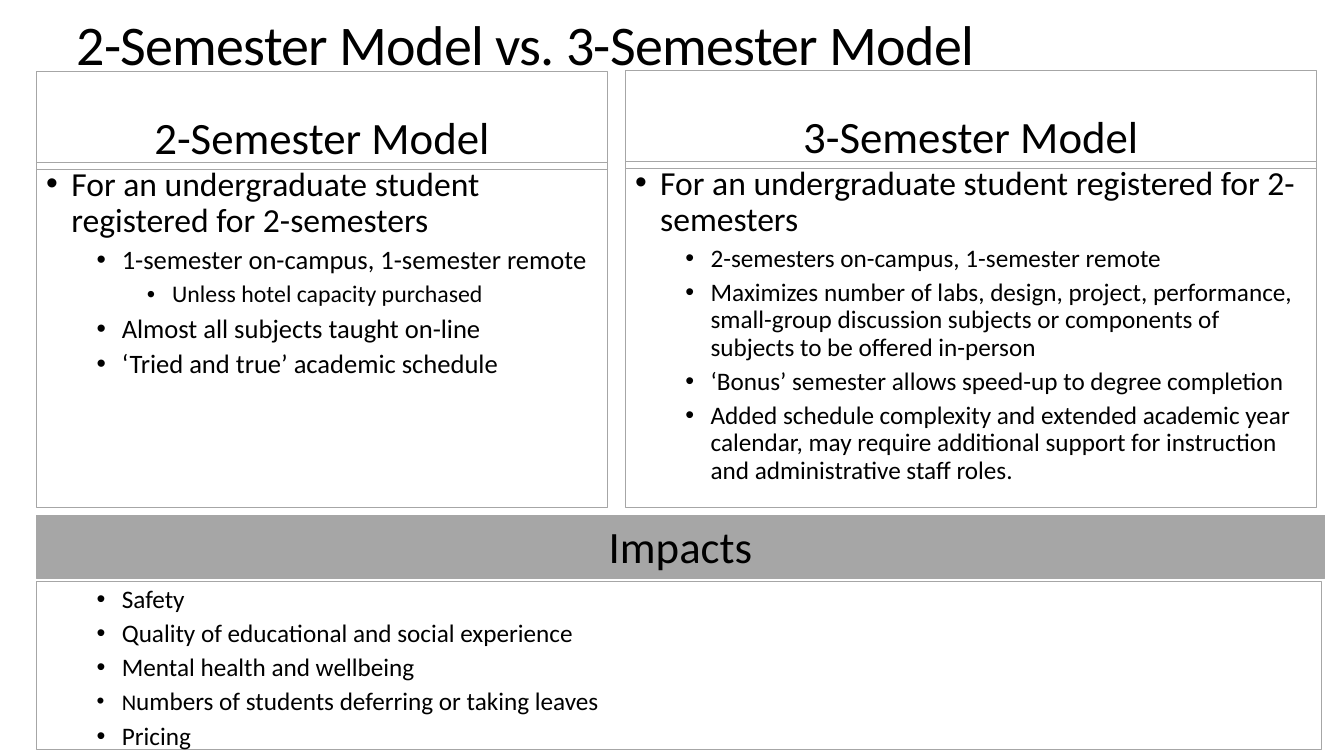
from dataclasses import dataclass

from lxml import etree
from pptx import Presentation, util as u
from pptx.dml.color import RGBColor
from pptx.enum import shapes, text
from pptx.oxml import ns

FONT = "Calibri"
BLACK = "000000"
GREY = "A6A6A6"
LEFT, RIGHT = 0.36, 6.2
LEFT_WIDTH, RIGHT_WIDTH = 5.67, 6.86
HEADING_HEIGHT = 0.97


@dataclass
class Line:
    """A paragraph; level None is a centred heading, others are bullets."""
    wording: str
    size: float
    level: int | None = 1
    initial_size: float | None = None


@dataclass
class Panel:
    """A bordered rectangle with its paragraphs."""
    left: float
    top: float
    width: float
    height: float
    lines: list[Line]
    fill: str | None = None


def heading(wording: str) -> list[Line]:
    """Return the single centred paragraph of a heading panel."""
    return [Line(wording, 32, None)]


PANELS = [
    Panel(RIGHT, 1.6, RIGHT_WIDTH, 3.44, [
        Line("For an undergraduate student registered for 2-semesters", 24, 0),
        Line("2-semesters on-campus, 1-semester remote", 18),
        Line("Maximizes number of labs, design, project, performance, small-group "
             "discussion subjects or components of subjects to be offered in-person", 18),
        Line("‘Bonus’ semester allows speed-up to degree completion", 18),
        Line("Added schedule complexity and extended academic year calendar, may require "
             "additional support for instruction and administrative staff roles.", 18),
    ]),
    Panel(LEFT, 1.61, LEFT_WIDTH, 3.43, [
        Line("For an undergraduate student registered for 2-semesters", 24, 0),
        Line("1-semester on-campus, 1-semester remote", 19),
        Line("Unless hotel capacity purchased", 17, 2),
        Line("Almost all subjects taught on-line", 19),
        Line("‘Tried and true’ academic schedule", 19),
    ]),
    Panel(RIGHT, 0.7, RIGHT_WIDTH, HEADING_HEIGHT, heading("3-Semester Model")),
    Panel(LEFT, 0.71, LEFT_WIDTH, HEADING_HEIGHT, heading("2-Semester Model")),
    Panel(LEFT, 5.77, 12.75, 1.67, [
        Line("Safety", 18),
        Line("Quality of educational and social experience", 18),
        Line("Mental health and wellbeing", 18),
        Line("Numbers of students deferring or taking leaves", 18, initial_size=16),
        Line("Pricing", 18),
    ]),
    Panel(LEFT, 5.11, 12.78, 0.63, heading("Impacts"), GREY),
]


def colour(value: str) -> RGBColor:
    """Convert a hex string to a colour."""
    return RGBColor.from_string(value)


def format_font(font, size: float) -> None:
    """Apply the slide's typeface and colour at the given size."""
    font.name = FONT
    font.size = u.Pt(size)
    font.color.rgb = colour(BLACK)


def add_bullet(paragraph, level: int) -> None:
    """Indent a paragraph for its level and give it a round bullet."""
    paragraph.level = level
    properties = paragraph._p.get_or_add_pPr()
    properties.set("marL", str(u.Inches(0.25 + 0.5 * level)))
    properties.set("indent", str(u.Inches(-0.25)))
    etree.SubElement(properties, ns.qn("a:buFont")).set("typeface", "Arial")
    etree.SubElement(properties, ns.qn("a:buChar")).set("char", "•")


def write_line(paragraph, line: Line) -> None:
    """Fill and format one paragraph."""
    paragraph.line_spacing = 0.9
    paragraph.space_before = u.Pt(5 if line.level else 10)
    if line.level is None:
        paragraph.alignment = text.PP_ALIGN.CENTER
    else:
        paragraph.alignment = text.PP_ALIGN.LEFT
        add_bullet(paragraph, line.level)
    format_font(paragraph.font, line.size)
    if line.initial_size:
        initial = paragraph.add_run()
        initial.text = line.wording[0]
        initial.font.size = u.Pt(line.initial_size)
        paragraph.add_run().text = line.wording[1:]
    else:
        paragraph.add_run().text = line.wording


def add_panel(slide, panel: Panel) -> None:
    """Draw a panel and its text."""
    shape = slide.shapes.add_shape(
        shapes.MSO_SHAPE.RECTANGLE, u.Inches(panel.left), u.Inches(panel.top),
        u.Inches(panel.width), u.Inches(panel.height))
    shape.shadow.inherit = False
    shape.line.color.rgb = colour(GREY)
    shape.line.width = u.Pt(0.75)
    if panel.fill:
        shape.fill.solid()
        shape.fill.fore_color.rgb = colour(panel.fill)
    else:
        shape.fill.background()
    frame = shape.text_frame
    frame.word_wrap = True
    is_heading = panel.lines[0].level is None
    frame.vertical_anchor = text.MSO_ANCHOR.BOTTOM if is_heading else text.MSO_ANCHOR.TOP
    for index, line in enumerate(panel.lines):
        write_line(frame.add_paragraph() if index else frame.paragraphs[0], line)


def format_title(title) -> None:
    """Place and write the slide title."""
    title.left, title.top = u.Inches(0.66), u.Inches(-0.25)
    title.width, title.height = u.Inches(11.5), u.Inches(1.45)
    frame = title.text_frame
    frame.auto_size = text.MSO_AUTO_SIZE.NONE
    frame.vertical_anchor = text.MSO_ANCHOR.MIDDLE
    paragraph = frame.paragraphs[0]
    paragraph.alignment = text.PP_ALIGN.LEFT
    paragraph.line_spacing = 0.9
    format_font(paragraph.font, 40)
    run = paragraph.add_run()
    run.text = "2-Semester Model vs. 3-Semester Model"
    run._r.get_or_add_rPr().set("spc", "-50")


def main() -> None:
    """Build and save the slide."""
    presentation = Presentation()
    presentation.slide_width = u.Inches(13.33)
    presentation.slide_height = u.Inches(7.5)
    slide = presentation.slides.add_slide(presentation.slide_layouts[5])
    format_title(slide.shapes.title)
    for panel in PANELS:
        add_panel(slide, panel)
    presentation.save("out.pptx")


if __name__ == "__main__":
    main()
